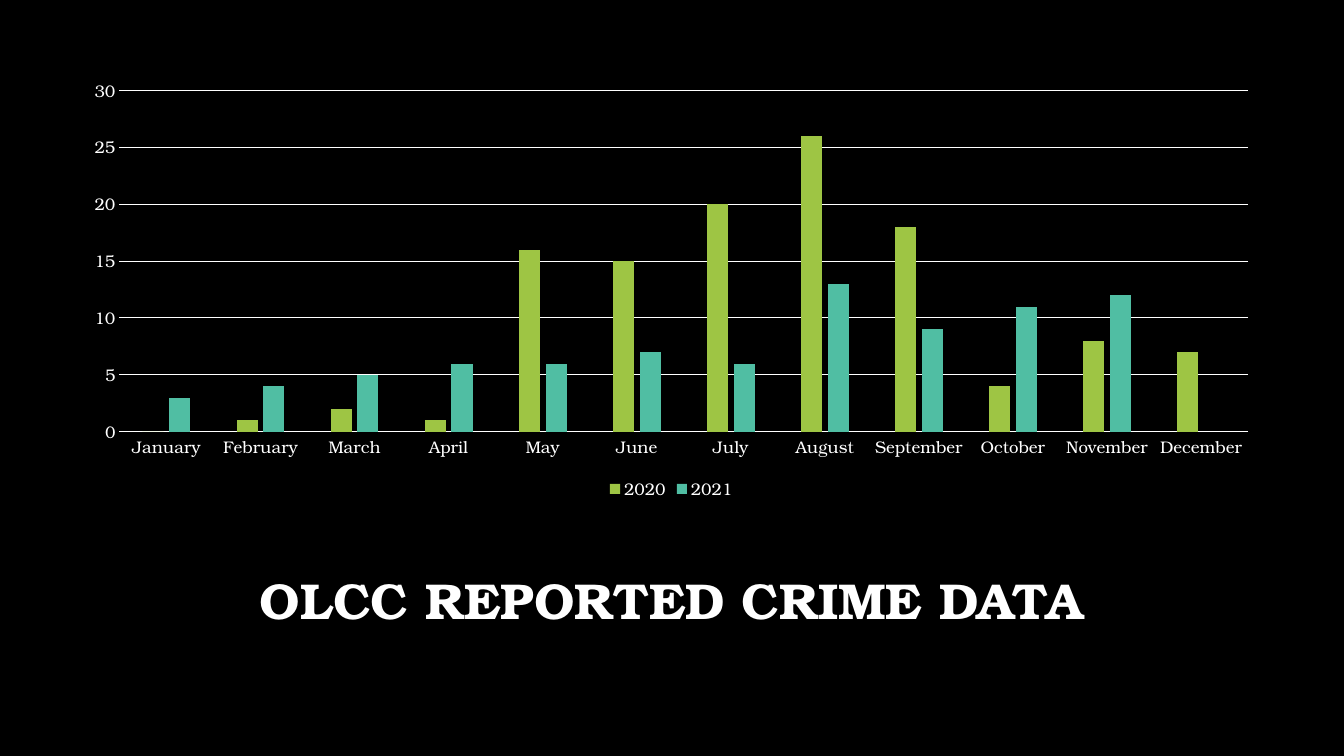
from lxml import etree
from pptx import Presentation
from pptx import util as u
from pptx.chart.data import CategoryChartData
from pptx.dml.color import RGBColor
from pptx.enum import chart as charts, text
from pptx.oxml.ns import qn

# Content
TITLE = "OLCC REPORTED CRIME DATA"
MONTHS = ["January", "February", "March", "April", "May", "June", "July",
          "August", "September", "October", "November", "December"]
REPORTS = {
    "2020": [0, 1, 2, 1, 16, 15, 20, 26, 18, 4, 8, 7],
    "2021": [3, 4, 5, 6, 6, 7, 6, 13, 9, 11, 12, None],
}

# Theme and layout, lengths in points
THEME = {
    "font": "TeX Gyre Bonum",
    "background": "000000",
    "ink": "FFFFFF",
    "series": ["9EC544", "50BEA3"],
    "title_size": 36,
    "label_size": 12,
    "line_width": 0.75,
}
SLIDE_SIZE = (960, 540)
CHART_BOX = (50.4, 50.4, 858.24, 309.6)
TITLE_BOX = (72, 379.44, 815.04, 74.16)


def points(values):
    return [u.Pt(value) for value in values]


def set_attributes(target, values):
    for name, value in values.items():
        setattr(target, name, value)


def style_font(font, size, bold=False):
    set_attributes(font, {"name": THEME["font"], "size": u.Pt(size), "bold": bold})
    font.color.rgb = RGBColor.from_string(THEME["ink"])


def style_line(line):
    line.color.rgb = RGBColor.from_string(THEME["ink"])
    line.width = u.Pt(THEME["line_width"])


def add_title(slide):
    frame = slide.shapes.add_textbox(*points(TITLE_BOX)).text_frame
    set_attributes(frame, {"word_wrap": True, "vertical_anchor": text.MSO_ANCHOR.BOTTOM})
    paragraph = frame.paragraphs[0]
    set_attributes(paragraph, {"alignment": text.PP_ALIGN.CENTER, "line_spacing": 0.9})
    run = paragraph.add_run()
    run.text = TITLE
    style_font(run.font, THEME["title_size"], bold=True)


def add_crime_chart(slide):
    data = CategoryChartData()
    data.categories = MONTHS
    for year, counts in REPORTS.items():
        data.add_series(year, counts)
    chart = slide.shapes.add_chart(
        charts.XL_CHART_TYPE.COLUMN_CLUSTERED, *points(CHART_BOX), data).chart
    set_attributes(chart, {"has_title": False, "has_legend": True})
    style_font(chart.font, THEME["label_size"])

    # Columns
    plot = chart.plots[0]
    set_attributes(plot, {"gap_width": 219, "overlap": -27, "vary_by_categories": False})
    for series, color in zip(plot.series, THEME["series"]):
        series.format.fill.solid()
        series.format.fill.fore_color.rgb = RGBColor.from_string(color)

    # Axes
    for axis in (chart.category_axis, chart.value_axis):
        set_attributes(axis, {"major_tick_mark": charts.XL_TICK_MARK.NONE,
                              "minor_tick_mark": charts.XL_TICK_MARK.NONE})
        style_font(axis.tick_labels.font, THEME["label_size"])
    style_line(chart.category_axis.format.line)
    set_attributes(chart.value_axis, {"minimum_scale": 0, "maximum_scale": 30,
                                      "major_unit": 5, "has_major_gridlines": True})
    chart.value_axis.format.line.fill.background()
    style_line(chart.value_axis.major_gridlines.format.line)

    # Legend
    set_attributes(chart.legend, {"position": charts.XL_LEGEND_POSITION.BOTTOM,
                                  "include_in_layout": False})
    style_font(chart.legend.font, THEME["label_size"])


def main():
    presentation = Presentation()
    width, height = points(SLIDE_SIZE)
    set_attributes(presentation, {"slide_width": width, "slide_height": height})
    slide = presentation.slides.add_slide(presentation.slide_layouts[6])
    slide.background.fill.solid()
    slide.background.fill.fore_color.rgb = RGBColor.from_string(THEME["background"])
    add_title(slide)
    add_crime_chart(slide)
    presentation.save("out.pptx")


if __name__ == "__main__":
    main()
